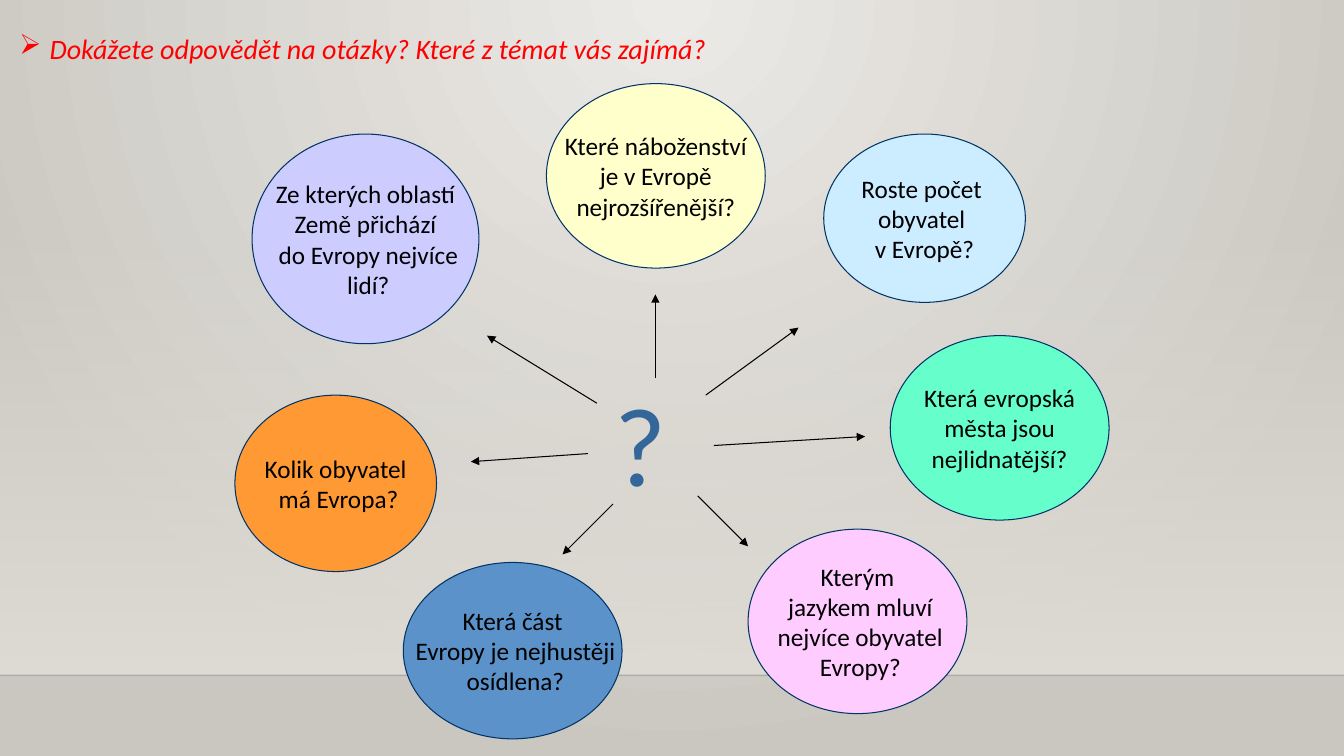
from lxml.etree import SubElement
from pptx import Presentation
from pptx.dml.color import RGBColor
from pptx.enum.shapes import MSO_CONNECTOR as Connector, MSO_SHAPE as Shape
from pptx.enum.text import MSO_ANCHOR as Anchor, MSO_AUTO_SIZE as AutoSize, PP_ALIGN as Align
from pptx.oxml.ns import qn
from pptx.util import Inches, Pt

WIDTH, HEIGHT = 13.33, 7.5
FLOOR = 6.7
FONT = "Calibri"
HEADING = " Dokážete odpovědět na otázky? Které z témat vás zajímá? "

# left, top, width, height, fill, lines of the question
BUBBLES = [
    (2.33, 3.92, 2, 1.75, "FF9933", ["Kolik obyvatel", " má Evropa?"]),
    (8.17, 1.33, 2, 1.67, "CCECFF", ["Roste počet ", "obyvatel ", "v Evropě?"]),
    (5.42, 0.83, 2.17, 1.83, "FFFFCC",
     ["Které náboženství", " je v Evropě ", "nejrozšířenější?"]),
    (7.42, 5.25, 2.17, 1.83, "FFCCFF",
     ["Kterým", " jazykem mluví", " nejvíce obyvatel", " Evropy?"]),
    (8.83, 3.33, 2.17, 1.83, "66FFCC",
     ["Která evropská", " města jsou ", "nejlidnatější?"]),
    (2.5, 1.33, 2.25, 2.08, "CCCCFF",
     ["Ze kterých oblastí", "Země přichází", " do Evropy nejvíce", " lidí?"]),
    (4, 5.58, 2.17, 1.75, "5B92C9",
     ["Která část", " Evropy je nejhustěji", " osídlena?"]),
]

# start x, start y, end x, end y
ARROWS = [
    (5.83, 4.5, 4.67, 4.58),
    (5.92, 4, 4.83, 3.33),
    (6.5, 3.75, 6.5, 2.92),
    (7, 3.92, 7.92, 3.25),
    (7.08, 4.42, 8.58, 4.33),
    (6.92, 4.92, 7.42, 5.42),
    (6.08, 5, 5.58, 5.5),
]


def color(value):
    return RGBColor.from_string(value)


def inches(*values):
    return [Inches(value) for value in values]


def add_element(parent, tag, **attributes):
    return SubElement(parent, qn(tag), attributes)


def set_opacity(element, percent):
    """Make the first plain colour inside the element see-through."""
    first = next(element.iter(qn("a:srgbClr")))
    add_element(first, "a:alpha", val=str(percent * 1000))


def set_gradient(fill, first, last):
    fill.gradient()
    for stop, value in zip(fill.gradient_stops, (first, last)):
        stop.color.rgb = color(value)


def add_run(para, text, size, value, italic=None):
    span = para.add_run()
    span.text = text
    span.font.name = FONT
    span.font.size = Pt(size)
    span.font.italic = italic
    span.font.color.rgb = color(value)


def add_line(page, ends, value, width):
    line = page.shapes.add_connector(Connector.STRAIGHT, *inches(*ends))
    line.line.color.rgb = color(value)
    line.line.width = Pt(width)
    add_element(line._element.spPr, "a:effectLst")
    return line


def add_backdrop(page):
    fill = page.background.fill
    set_gradient(fill, "ECEAE7", "CAC7C1")
    gradient = next(page._element.iter(qn("a:gradFill")))
    gradient.remove(gradient.find(qn("a:lin")))
    glow = add_element(gradient, "a:path", path="circle")
    add_element(glow, "a:fillToRect", l="43000", t="0", r="43000", b="100000")

    band = page.shapes.add_shape(Shape.RECTANGLE, *inches(0, 2.21, WIDTH, FLOOR - 2.21))
    band.shadow.inherit = False
    band.line.fill.background()
    set_gradient(band.fill, "DFDBD5", "DFDBD5")
    band.fill.gradient_angle = 270
    set_opacity(band._element.spPr, 0)

    edge = add_line(page, (0, FLOOR, WIDTH, FLOOR), "000001", 1)
    set_opacity(edge._element.spPr, 20)


def add_heading(page):
    title = page.shapes.title
    title.left, title.top, title.width, title.height = inches(-0.62, 0.26, 8.5, 0.43)
    frame = title.text_frame
    frame.auto_size = AutoSize.NONE
    frame.word_wrap = True
    frame.vertical_anchor = Anchor.TOP
    para = frame.paragraphs[0]
    para.alignment = Align.CENTER
    add_element(para._p.get_or_add_pPr(), "a:buChar", char="➢")
    add_run(para, HEADING, 20, "FF0000", italic=True)


def add_bubble(page, left, top, width, height, fill, lines):
    bubble = page.shapes.add_shape(Shape.OVAL, *inches(left, top, width, height))
    bubble.shadow.inherit = False
    bubble.fill.solid()
    bubble.fill.fore_color.rgb = color(fill)
    bubble.line.color.rgb = color("003366")
    bubble.line.width = Pt(0.75)
    frame = bubble.text_frame
    frame.word_wrap = False
    frame.vertical_anchor = Anchor.MIDDLE
    for index, text in enumerate(lines):
        para = frame.add_paragraph() if index else frame.paragraphs[0]
        para.alignment = Align.CENTER
        add_run(para, text, 18, "000000")


def add_question_mark(page):
    box = page.shapes.add_textbox(*inches(6, 3.67, 0.75, 1.43))
    box.text_frame.word_wrap = True
    add_run(box.text_frame.paragraphs[0], "?", 80, "336699")


def main():
    deck = Presentation()
    deck.slide_width, deck.slide_height = inches(WIDTH, HEIGHT)
    page = deck.slides.add_slide(deck.slide_layouts.get_by_name("Title Only"))
    add_backdrop(page)
    add_heading(page)
    add_question_mark(page)
    for bubble in BUBBLES:
        add_bubble(page, *bubble)
    for ends in ARROWS:
        arrow = add_line(page, ends, "000000", 0.75)
        add_element(arrow.line._get_or_add_ln(), "a:tailEnd", type="triangle")
    deck.save("out.pptx")


if __name__ == "__main__":
    main()
